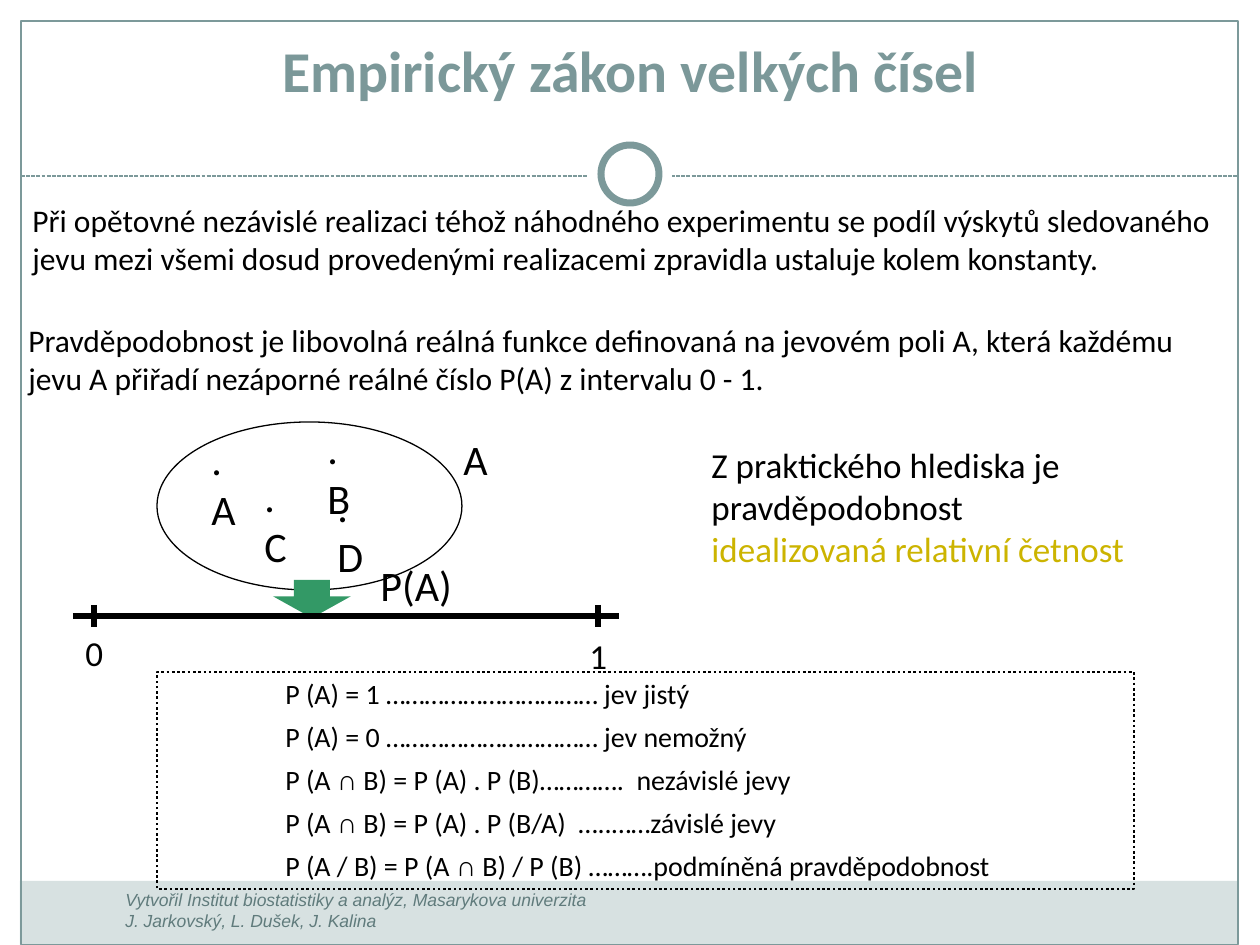
"""Build a slide on the empirical law of large numbers."""
from lxml.etree import SubElement
from pptx import Presentation
from pptx.dml.color import RGBColor
from pptx.enum.dml import MSO_LINE
from pptx.enum.shapes import MSO_CONNECTOR, MSO_SHAPE
from pptx.enum.text import MSO_ANCHOR, PP_ALIGN
from pptx.oxml.ns import qn
from pptx.util import Emu, Pt

PX = 914400 // 126
WIDTH, HEIGHT = 1260, 945
COLORS = {
    "white": "FFFFFF", "black": "000000", "frame": "7C999A", "title": "7B9899",
    "band": "D7E1E1", "footer": "607B7C", "arrow": "339966", "accent": "CCB400",
}

TITLE = "Empirický zákon velkých čísel"
FOOTER = ("Vytvořil Institut biostatistiky a analýz, Masarykova univerzita\v"
          "J. Jarkovský, L. Dušek, J. Kalina")
STATEMENTS = [
    ("Při opětovné nezávislé realizaci téhož náhodného experimentu se podíl výskytů "
     "sledovaného jevu mezi všemi dosud provedenými realizacemi zpravidla ustaluje "
     "kolem konstanty.", (20, 195, 1206, 95)),
    ("Pravděpodobnost je libovolná reálná funkce definovaná na jevovém poli A, která "
     "každému jevu A přiřadí nezáporné reálné číslo P(A) z intervalu 0 - 1.",
     (16, 315, 1200, 95)),
]
PRACTICE = ["Z praktického hlediska je pravděpodobnost", "idealizovaná relativní četnost"]
EVENTS = [(".A", 199, 427), (".B", 315, 416), (".C", 252, 464), (".D", 325, 474),
          ("A", 451, 427)]
AXIS_Y, AXIS_START, AXIS_END = 616, 73, 619
TICKS = [("0", 94, 625), ("1", 598, 628)]
LABEL_WIDTH, LABEL_HEIGHT = 45, 48
FORMULAS = [
    "P (A) = 1 …………………………… jev jistý",
    "P (A) = 0 …………………………… jev nemožný",
    "P (A ∩ B) = P (A) . P (B)………….  nezávislé jevy",
    "P (A ∩ B) = P (A) . P (B/A)  …..……závislé jevy",
    "P (A / B) = P (A ∩ B) / P (B) ……….podmíněná pravděpodobnost",
]
FORMULA_TOP, FORMULA_STEP = 670, 43

presentation = Presentation()
presentation.slide_width, presentation.slide_height = Emu(WIDTH * PX), Emu(HEIGHT * PX)
slide = presentation.slides.add_slide(presentation.slide_layouts[6])


def emu(*lengths):
    return [Emu(length * PX) for length in lengths]


def rgb(name):
    return RGBColor.from_string(COLORS[name])


def set_line(line, color, width, dash=None):
    line.color.rgb = rgb(color)
    line.width = Pt(width)
    if dash:
        line.dash_style = dash


def add_shape(kind, box, fill=None, line=None):
    shape = slide.shapes.add_shape(kind, *emu(*box))
    shape.shadow.inherit = False
    if fill:
        shape.fill.solid()
        shape.fill.fore_color.rgb = rgb(fill)
    else:
        shape.fill.background()
    if line:
        set_line(shape.line, *line)
    else:
        shape.line.fill.background()
    return shape


def add_line(start_x, start_y, end_x, end_y, *line):
    connector = slide.shapes.add_connector(
        MSO_CONNECTOR.STRAIGHT, *emu(start_x, start_y, end_x, end_y))
    SubElement(connector._element.spPr, qn("a:effectLst"))
    set_line(connector.line, *line)


def style(font, size, color="black", name="Calibri"):
    font.name, font.size, font.color.rgb = name, Pt(size), rgb(color)


def add_text(text, box, size, color="black", name="Calibri"):
    shape = slide.shapes.add_textbox(*emu(*box))
    shape.text_frame.word_wrap = True
    paragraph = shape.text_frame.paragraphs[0]
    paragraph.text = text
    style(paragraph.font, size, color, name)
    return shape.text_frame


def add_formula(text, box):
    frame = add_text("", box, 16)
    before, sign, after = text.partition("∩")
    for part in filter(None, (before, sign, after)):
        run = frame.paragraphs[0].add_run()
        run.text = part
        if part == sign:
            run.font.name = "Arial"


add_shape(MSO_SHAPE.RECTANGLE, (20, 881, 1217, 64), "band")
add_shape(MSO_SHAPE.RECTANGLE, (21, 21, 1217, 924), None, ("frame", 0.75))
add_line(21, 176, 1238, 176, "frame", 0.75, MSO_LINE.SQUARE_DOT)
add_shape(MSO_SHAPE.OVAL, (588, 132, 84, 84), "white")
add_shape(MSO_SHAPE.OVAL, (601, 145, 58, 58), "white", ("frame", 4))
footer = add_text(FOOTER, (113, 883, 494, 50), 10, "footer", "Arial")
footer.paragraphs[0].font.italic = True

title = add_text(TITLE, (11, 24, 1239, 86), 33, "title")
title.vertical_anchor = MSO_ANCHOR.BOTTOM
title.paragraphs[0].alignment = PP_ALIGN.CENTER
title.paragraphs[0].font.bold = True

for statement, box in STATEMENTS:
    add_text(statement, box, 18)

add_shape(MSO_SHAPE.OVAL, (157, 422, 305, 168), "white", ("black", 0.75))
for label, left, top in EVENTS:
    add_text(label, (left, top, LABEL_WIDTH, LABEL_HEIGHT), 24)

arrow = add_shape(MSO_SHAPE.DOWN_ARROW, (273, 580, 78, 38), "arrow")
arrow.adjustments[0], arrow.adjustments[1] = 0.46, 0.57
add_text("P(A)", (368, 553, 134, LABEL_HEIGHT), 24)

add_line(AXIS_START, AXIS_Y, AXIS_END, AXIS_Y, "black", 3)
for label, center, top in TICKS:
    add_line(center, AXIS_Y - 11, center, AXIS_Y + 11, "black", 3)
    add_text(label, (center - 21, top, LABEL_WIDTH, LABEL_HEIGHT), 20)

practice = add_text(PRACTICE[0], (699, 437, 525, 184), 20)
conclusion = practice.add_paragraph()
conclusion.text = PRACTICE[1]
style(conclusion.font, 20, "accent")

add_shape(MSO_SHAPE.RECTANGLE, (157, 672, 977, 217), None,
          ("black", 1.5, MSO_LINE.ROUND_DOT))
for index, formula in enumerate(FORMULAS):
    add_formula(formula, (273, FORMULA_TOP + index * FORMULA_STEP, 860, 46))

presentation.save("out.pptx")
